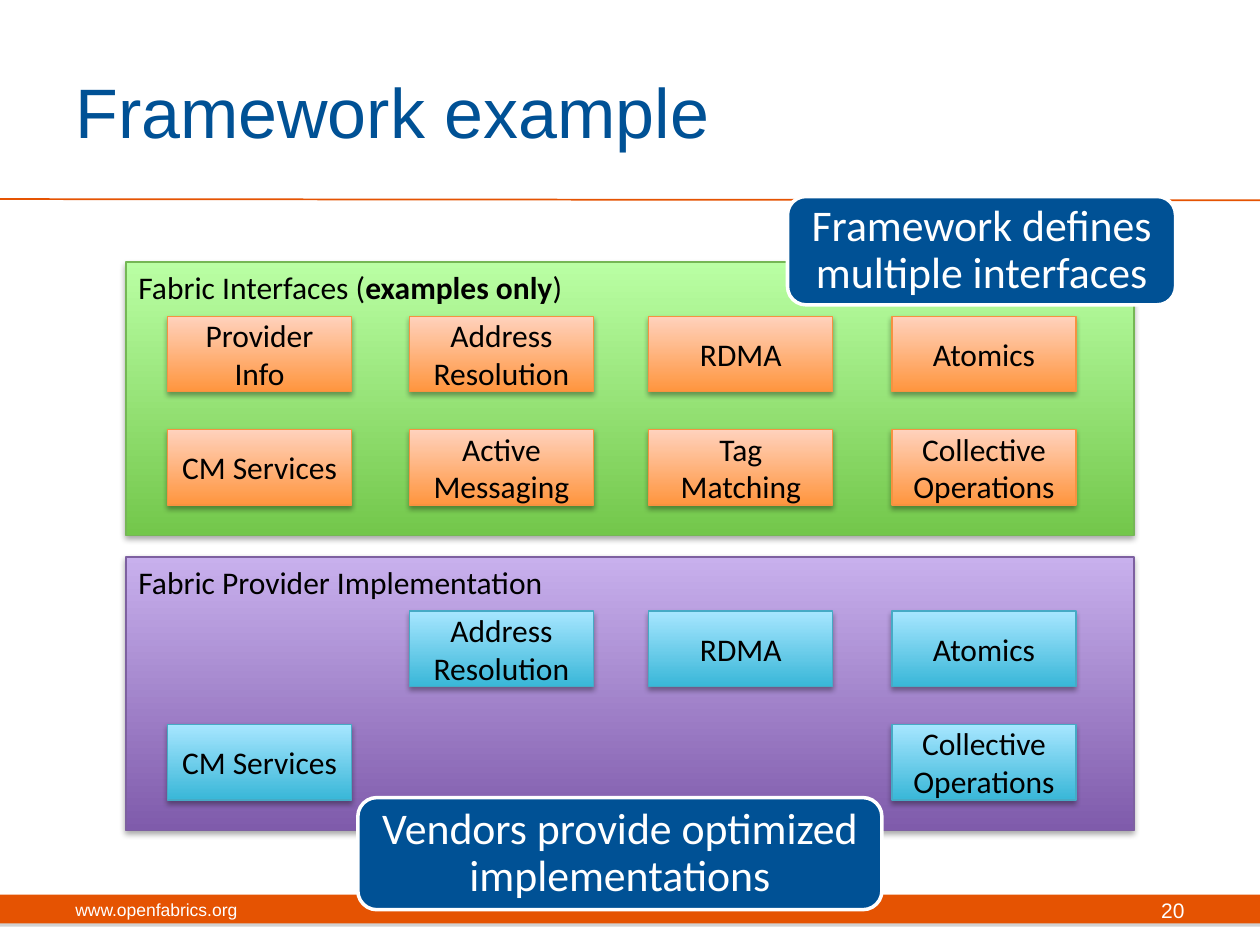
from lxml import etree
from pptx import Presentation
from pptx import util as u
from pptx.dml.color import RGBColor
from pptx.enum import shapes, text
from pptx.oxml.ns import qn

ORANGE, BLUE, WHITE, BLACK = "E55302", "005195", "FFFFFF", "000000"
# Each style: gradient from bottom to top, then line
GREEN_PANEL = ("73C74B", "BAFFA4", "75B755")
PURPLE_PANEL = ("7F5BAB", "C8B0ED", "7D60A0")
ORANGE_TILE = ("FF953E", "FFD2BD", "F69240")
CYAN_TILE = ("39B7D8", "A7E6FF", "46AAC5")

COLUMNS = (0.33, 2.25, 4.15, 6.08)
ROWS = (0.43, 1.33)
TILE_W, TILE_H = 1.46, 0.6

LEFT, CENTER, RIGHT = (text.PP_ALIGN.LEFT, text.PP_ALIGN.CENTER,
                       text.PP_ALIGN.RIGHT)
TOP, MIDDLE = text.MSO_ANCHOR.TOP, text.MSO_ANCHOR.MIDDLE

INTERFACES = (("Provider\nInfo", "Address Resolution", "RDMA", "Atomics"),
              ("CM Services", "Active Messaging", "Tag Matching",
               "Collective Operations"))
IMPLEMENTED = ((None, "Address Resolution", "RDMA", "Atomics"),
               ("CM Services", None, None, "Collective Operations"))


def rgb(value):
    return RGBColor.from_string(value)


def inches(box):
    return [u.Inches(v) for v in box]


def write(sp, words, size, font="Calibri", color=BLACK, align=CENTER,
          anchor=MIDDLE, spacing=None):
    """Fill a shape with text; parts between ** marks are bold."""
    tf = sp.text_frame
    tf.word_wrap = True
    tf.vertical_anchor = anchor
    for i, line in enumerate(words.split("\n")):
        p = tf.add_paragraph() if i else tf.paragraphs[0]
        p.alignment = align
        if spacing:
            p.line_spacing = spacing
        for j, part in enumerate(line.split("**")):
            r = p.add_run()
            r.text = part
            r.font.color.rgb = rgb(color)
            fmt = {"name": font, "size": u.Pt(size), "bold": j % 2 == 1}
            for name, value in fmt.items():
                setattr(r.font, name, value)


def add_label(s, box, words, size, color, align=LEFT):
    sp = s.shapes.add_textbox(*inches(box))
    write(sp, words, size, "Arial", color, align)


def add_box(s, box, kind=shapes.MSO_SHAPE.RECTANGLE):
    sp = s.shapes.add_shape(kind, *inches(box))
    sp.shadow.inherit = False
    return sp


def add_shadow(sp, color, blur):
    effects = sp._element.spPr.find(qn("a:effectLst"))
    outer = etree.SubElement(effects, qn("a:outerShdw"), blurRad=str(u.Pt(blur)),
                             dist=str(u.Pt(1.8)), dir="5400000", rotWithShape="0")
    clr = etree.SubElement(outer, qn("a:srgbClr"), val=color)
    etree.SubElement(clr, qn("a:alpha"), val="35000")


def add_gradient_box(s, box, style):
    sp = add_box(s, box)
    sp.fill.gradient()
    sp.fill.gradient_angle = 90
    for stop, color in zip(sp.fill.gradient_stops, style):
        stop.color.rgb = rgb(color)
    sp.line.color.rgb = rgb(style[2])
    sp.line.width = u.Pt(0.75)
    add_shadow(sp, BLACK, 3.1)
    return sp


def add_header(s, box):
    x, y, w, h = box
    rule = s.shapes.add_connector(shapes.MSO_CONNECTOR.STRAIGHT,
                                  *inches((x, y + h, x + w, y + h + 0.01)))
    rule.line.color.rgb = rgb(ORANGE)
    rule.line.width = u.Pt(1)
    etree.SubElement(rule._element.spPr, qn("a:effectLst"))
    add_label(s, (x + 0.5, y + 0.25, 8.17, 1.25), "Framework example", 40, BLUE)


def add_footer(s, box):
    x, y, w, h = box
    bar = add_box(s, box)
    bar.fill.solid()
    bar.fill.fore_color.rgb = rgb(ORANGE)
    bar.line.fill.background()
    add_shadow(bar, "808080", 0)
    add_label(s, (x + 0.5, y - 0.08, 3.17, 0.4), "www.openfabrics.org", 10, WHITE)
    add_label(s, (x + w - 2.83, y - 0.08, 2.33, 0.4), "20", 12, WHITE, RIGHT)


def add_panel(s, box, title, style, tiles, tile_style):
    """A titled panel with a grid of tiles; None leaves a cell empty."""
    x, y, w, h = box
    write(add_gradient_box(s, box, style), title, 18, align=LEFT, anchor=TOP)
    for dy, names in zip(ROWS, tiles):
        for dx, name in zip(COLUMNS, names):
            if name:
                tile = add_gradient_box(s, (x + dx, y + dy, TILE_W, TILE_H),
                                        tile_style)
                write(tile, name, 18)


def add_callout(s, box, words):
    sp = add_box(s, box, shapes.MSO_SHAPE.ROUNDED_RECTANGLE)
    sp.adjustments[0] = 0.17
    sp.fill.solid()
    sp.fill.fore_color.rgb = rgb(BLUE)
    sp.line.color.rgb = rgb(WHITE)
    sp.line.width = u.Pt(2)
    for side in ("left", "top", "right", "bottom"):
        setattr(sp.text_frame, "margin_" + side, u.Inches(0.12))
    write(sp, words, 25, color=WHITE, spacing=0.9)


def main():
    prs = Presentation()
    prs.slide_width, prs.slide_height = inches((10, 7.5))
    s = prs.slides.add_slide(prs.slide_layouts[6])

    # Frame of the slide
    add_footer(s, (0, 7.1, 10, 0.23))
    add_header(s, (0, 0, 10, 1.58))

    # Interfaces above, their implementation below
    add_panel(s, (1, 2.08, 8, 2.17), "Fabric Interfaces (**examples only**)",
              GREEN_PANEL, INTERFACES, ORANGE_TILE)
    add_panel(s, (1, 4.42, 8, 2.17), "Fabric Provider Implementation",
              PURPLE_PANEL, IMPLEMENTED, CYAN_TILE)

    # Callouts on top
    add_callout(s, (6.25, 1.56, 3.08, 0.86),
                "Framework defines multiple interfaces")
    add_callout(s, (2.84, 6.33, 4.16, 0.89),
                "Vendors provide optimized implementations")

    prs.save("out.pptx")


if __name__ == "__main__":
    main()
